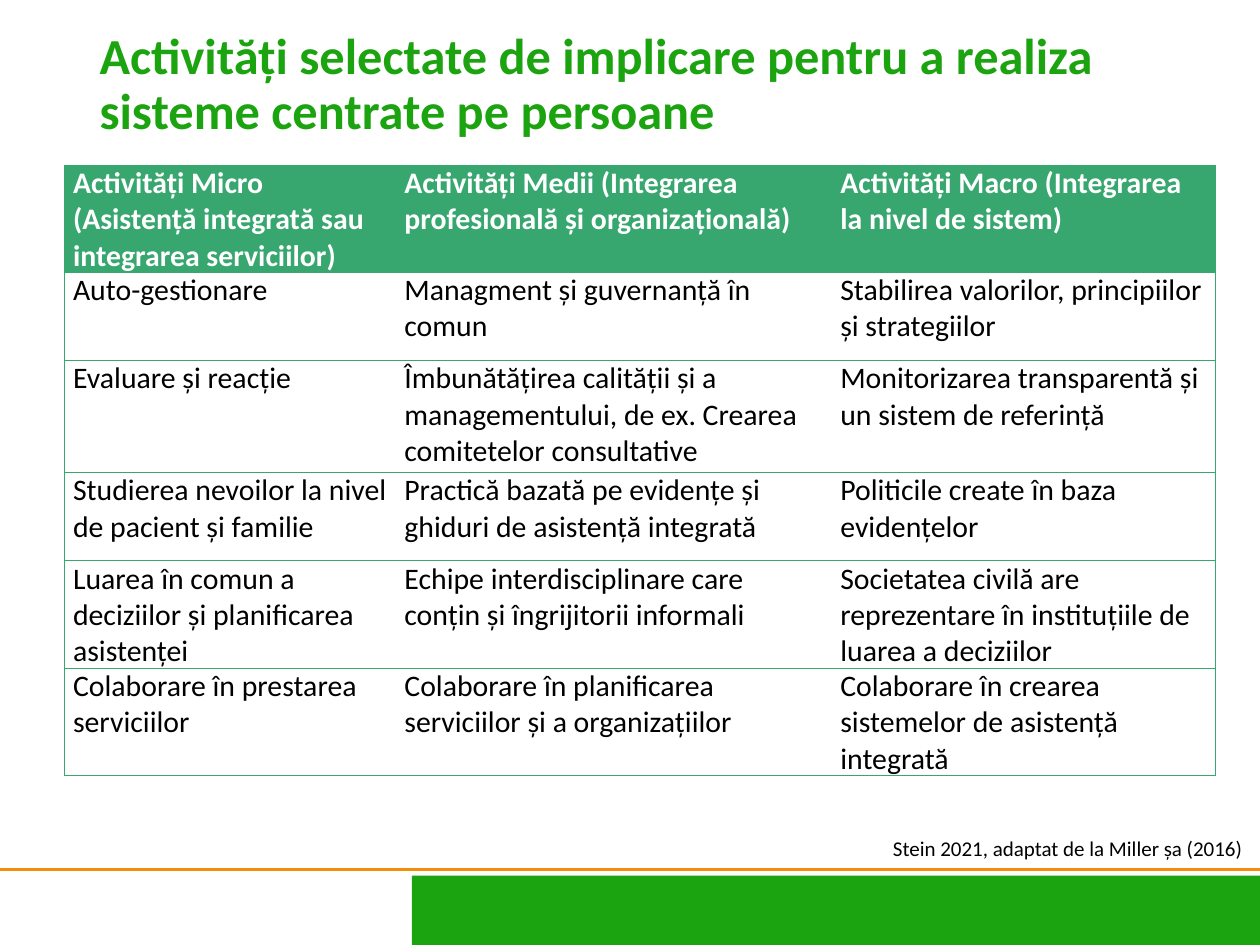
from lxml.etree import SubElement
from pptx import Presentation
from pptx.dml.color import RGBColor
from pptx.enum.shapes import MSO_CONNECTOR, MSO_SHAPE
from pptx.enum.text import MSO_ANCHOR, MSO_AUTO_SIZE, PP_ALIGN
from pptx.oxml import parse_xml
from pptx.oxml.ns import nsdecls, qn
from pptx.util import Inches, Pt

GREEN = RGBColor(0x1C, 0xA3, 0x10)
ORANGE = RGBColor(0xF3, 0x8E, 0x0A)
TABLE_GREEN = RGBColor(0x37, 0xA7, 0x6F)
WHITE = RGBColor(0xFF, 0xFF, 0xFF)
BLACK = RGBColor(0, 0, 0)
FONT = "Calibri"

TITLE = "Activități selectate de implicare pentru a realiza sisteme centrate pe persoane"
SOURCE = "Stein 2021, adaptat de la Miller șa (2016)"
ACTIVITIES = [
    ("Activități Micro (Asistență integrată sau integrarea serviciilor)",
     "Activități Medii (Integrarea profesională și organizațională)",
     "Activități Macro (Integrarea la nivel de sistem)"),
    ("Auto-gestionare",
     "Managment și guvernanță în comun",
     "Stabilirea valorilor, principiilor și strategiilor"),
    ("Evaluare și reacție",
     "Îmbunătățirea calității și a managementului, de ex. Crearea comitetelor consultative",
     "Monitorizarea transparentă și un sistem de referință"),
    ("Studierea nevoilor la nivel de pacient și familie",
     "Practică bazată pe evidențe și ghiduri de asistență integrată",
     "Politicile create în baza evidențelor"),
    ("Luarea în comun a deciziilor și planificarea asistenței",
     "Echipe interdisciplinare care conțin și îngrijitorii informali",
     "Societatea civilă are reprezentare în instituțiile de luarea a deciziilor"),
    ("Colaborare în prestarea serviciilor",
     "Colaborare în planificarea serviciilor și a organizațiilor",
     "Colaborare în crearea sistemelor de asistență integrată"),
]
COLUMN_WIDTHS = [2.63, 3.46, 3.05]
ROW_HEIGHTS = [0.7, 0.7, 0.89, 0.7, 0.8, 0.7]


def write_text(frame, text, size, color=BLACK, bold=False, align=PP_ALIGN.LEFT,
               line_spacing=None, space_after=None):
    frame.word_wrap = True
    paragraph = frame.paragraphs[0]
    paragraph.alignment = align
    paragraph.line_spacing = line_spacing
    paragraph.space_after = space_after
    run = paragraph.add_run()
    run.text = text
    run.font.name = FONT
    run.font.size = Pt(size)
    run.font.bold = bold
    run.font.color.rgb = color


def add_footer_band(slide, left, top, width, height):
    """Orange rule over the full width, with a green bar below it at the right."""
    bar_left, bar_top = left + Inches(3.27), top + Inches(0.05)
    bar = slide.shapes.add_shape(MSO_SHAPE.RECTANGLE, bar_left, bar_top,
                                 left + width - bar_left, top + height - bar_top)
    bar.shadow.inherit = False
    bar.fill.solid()
    bar.fill.fore_color.rgb = GREEN
    bar.line.fill.background()
    rule = slide.shapes.add_connector(MSO_CONNECTOR.STRAIGHT, left, top, left + width, top)
    rule.line.color.rgb = ORANGE
    rule.line.width = Pt(2)
    SubElement(rule._element.spPr, qn("a:effectLst"))


def place_title(slide, left, top, width, height):
    title = slide.shapes.title
    title.left, title.top, title.width, title.height = left, top, width, height
    frame = title.text_frame
    frame.auto_size = MSO_AUTO_SIZE.NONE
    frame.vertical_anchor = MSO_ANCHOR.MIDDLE
    write_text(frame, TITLE, 28.8, color=GREEN, bold=True, line_spacing=0.9)


def add_source_note(slide, left, top, width, height):
    note = slide.shapes.add_textbox(left, top, width, height)
    write_text(note.text_frame, SOURCE, 12, align=PP_ALIGN.RIGHT)


def set_borders(cell, sides):
    """Draw the given sides (of L, R, T, B) and clear the others."""
    properties = cell._tc.get_or_add_tcPr()
    for position, side in enumerate("LRTB"):
        fill = (f'<a:solidFill><a:srgbClr val="{TABLE_GREEN}"/></a:solidFill>'
                if side in sides else "<a:noFill/>")
        properties.insert(position, parse_xml(
            f'<a:ln{side} {nsdecls("a")} w="{Pt(0.5)}">{fill}</a:ln{side}>'))


def add_activity_table(slide, left, top, width, height):
    table = slide.shapes.add_table(len(ACTIVITIES), len(COLUMN_WIDTHS),
                                   left, top, width, height).table
    for column, column_width in zip(table.columns, COLUMN_WIDTHS):
        column.width = Inches(column_width)
    last = len(COLUMN_WIDTHS) - 1
    for row_index, texts in enumerate(ACTIVITIES):
        table.rows[row_index].height = Inches(ROW_HEIGHTS[row_index])
        header = row_index == 0
        for column_index, text in enumerate(texts):
            cell = table.cell(row_index, column_index)
            cell.margin_left = cell.margin_right = Inches(0.07)
            cell.margin_top = cell.margin_bottom = 0
            cell.fill.solid()
            cell.fill.fore_color.rgb = TABLE_GREEN if header else WHITE
            sides = "TB" + "L" * (column_index == 0) + "R" * (column_index == last)
            set_borders(cell, sides)
            write_text(cell.text_frame, text, 17, color=WHITE if header else BLACK,
                       bold=header, space_after=Pt(8))


def main():
    presentation = Presentation()
    presentation.slide_width = Inches(10)
    presentation.slide_height = Inches(7.5)
    slide = presentation.slides.add_slide(presentation.slide_layouts[5])
    add_footer_band(slide, 0, Inches(6.9), Inches(10), Inches(0.6))
    place_title(slide, Inches(0.69), Inches(0.21), Inches(8.96), Inches(0.94))
    add_source_note(slide, Inches(5.94), Inches(6.58), Inches(4.02), Inches(0.3))
    add_activity_table(slide, Inches(0.51), Inches(1.31), Inches(9.14), Inches(4.49))
    presentation.save("out.pptx")


if __name__ == "__main__":
    main()
